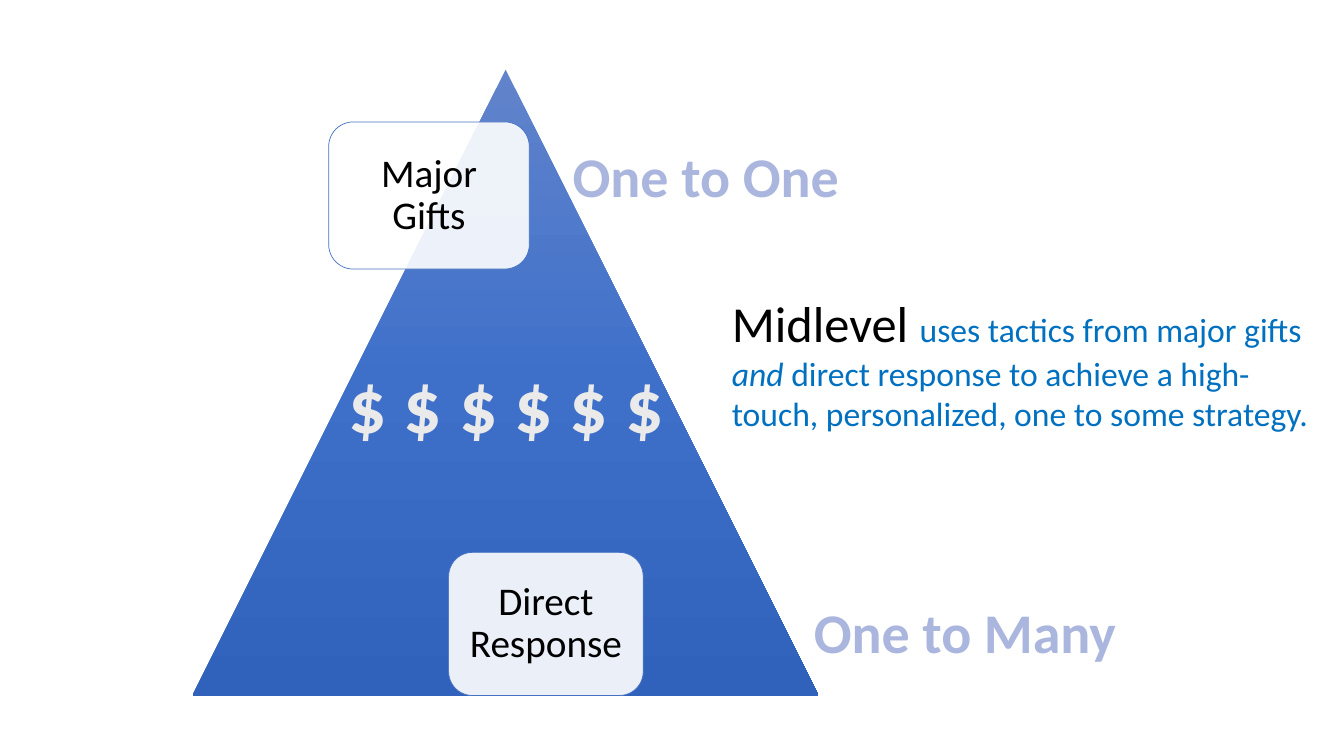
from copy import deepcopy

from lxml.etree import SubElement
from pptx import Presentation
from pptx.dml.color import RGBColor
from pptx.enum.shapes import MSO_SHAPE
from pptx.enum.text import MSO_ANCHOR, PP_ALIGN
from pptx.oxml.ns import qn
from pptx.util import Inches, Pt

BLACK, WHITE, BLUE = "000000", "FFFFFF", "4472C4"
HEADING, MONEY, MESSAGE = "ABB6DE", "EBEAEA", "0070C0"


def color(value):
    return RGBColor.from_string(value)


def set_font(font, size, value, bold=False):
    font.name = "Calibri"
    font.size = Pt(size)
    font.bold = bold
    font.color.rgb = color(value)


def add_shape(slide, kind, x, y, w, h):
    sp = slide.shapes.add_shape(kind, Inches(x), Inches(y), Inches(w), Inches(h))
    sp.shadow.inherit = False
    return sp


def add_triangle(slide, x, y, size):
    sp = add_shape(slide, MSO_SHAPE.ISOSCELES_TRIANGLE, x, y, size, size)
    sp.line.fill.background()
    sp.fill.gradient()
    sp.fill.gradient_angle = 270
    first = sp._element.spPr.find(".//" + qn("a:gs"))
    first.addnext(deepcopy(first))
    stops = [(0, "6183CB"), (0.5, "3E70CA"), (1, "3062BB")]
    for stop, (position, value) in zip(sp.fill.gradient_stops, stops):
        stop.position = position
        stop.color.rgb = color(value)


def add_label(slide, text, x, y, w, h):
    sp = add_shape(slide, MSO_SHAPE.ROUNDED_RECTANGLE, x, y, w, h)
    sp.fill.solid()
    sp.fill.fore_color.rgb = color(WHITE)
    fill = sp._element.spPr.find(qn("a:solidFill"))
    SubElement(fill[0], qn("a:alpha"), val="90000")
    sp.line.color.rgb = color(BLUE)
    sp.line.width = Pt(0.5)
    tf = sp.text_frame
    tf.word_wrap = True
    tf.vertical_anchor = MSO_ANCHOR.MIDDLE
    tf.margin_left = tf.margin_right = Inches(0.12)
    tf.margin_top = tf.margin_bottom = Inches(0.12)
    p = tf.paragraphs[0]
    p.text = text
    p.alignment = PP_ALIGN.CENTER
    p.line_spacing = 0.9
    set_font(p.font, 28, BLACK)


def add_text(slide, x, y, w, h, wrap=True):
    tb = slide.shapes.add_textbox(Inches(x), Inches(y), Inches(w), Inches(h))
    tb.text_frame.word_wrap = wrap
    return tb.text_frame.paragraphs[0]


def add_heading(slide, text, x, y, w, h, size=40, value=HEADING):
    p = add_text(slide, x, y, w, h, wrap=False)
    p.text = text
    p.alignment = PP_ALIGN.CENTER
    set_font(p.font, size, value, bold=True)


def add_message(slide, x, y, w, h):
    p = add_text(slide, x, y, w, h)
    runs = [
        ("Midlevel ", 36, BLACK, False),
        ("uses tactics from major gifts ", 24, MESSAGE, False),
        ("and", 24, MESSAGE, True),
        (" direct response to achieve a high-touch, personalized, "
         "one to some strategy.", 24, MESSAGE, False),
    ]
    for text, size, value, italic in runs:
        r = p.add_run()
        r.text = text
        set_font(r.font, size, value)
        r.font.italic = italic


def add_pyramid(slide, x, y, size):
    add_triangle(slide, x, y, size)
    add_label(slide, "Major Gifts", x + 1.35, y + 0.52, 1.99, 1.46)
    add_label(slide, "Direct Response", x + 2.54, y + size - 1.42, 1.93, 1.42)
    add_heading(slide, "$ $ $ $ $ $", x + 1.43, y + 2.81, 3.36, 1.01, 54, MONEY)


def main():
    prs = Presentation()
    prs.slide_width, prs.slide_height = Inches(13.33), Inches(7.5)
    slide = prs.slides.add_slide(prs.slide_layouts[6])
    add_pyramid(slide, 1.91, 0.69, 6.21)
    add_heading(slide, "One to Many", 7.83, 5.88, 3.48, 0.77)
    add_heading(slide, "One to One", 5.52, 1.36, 2.96, 0.77)
    add_message(slide, 7.16, 2.85, 5.95, 1.51)
    prs.save("out.pptx")


if __name__ == "__main__":
    main()
